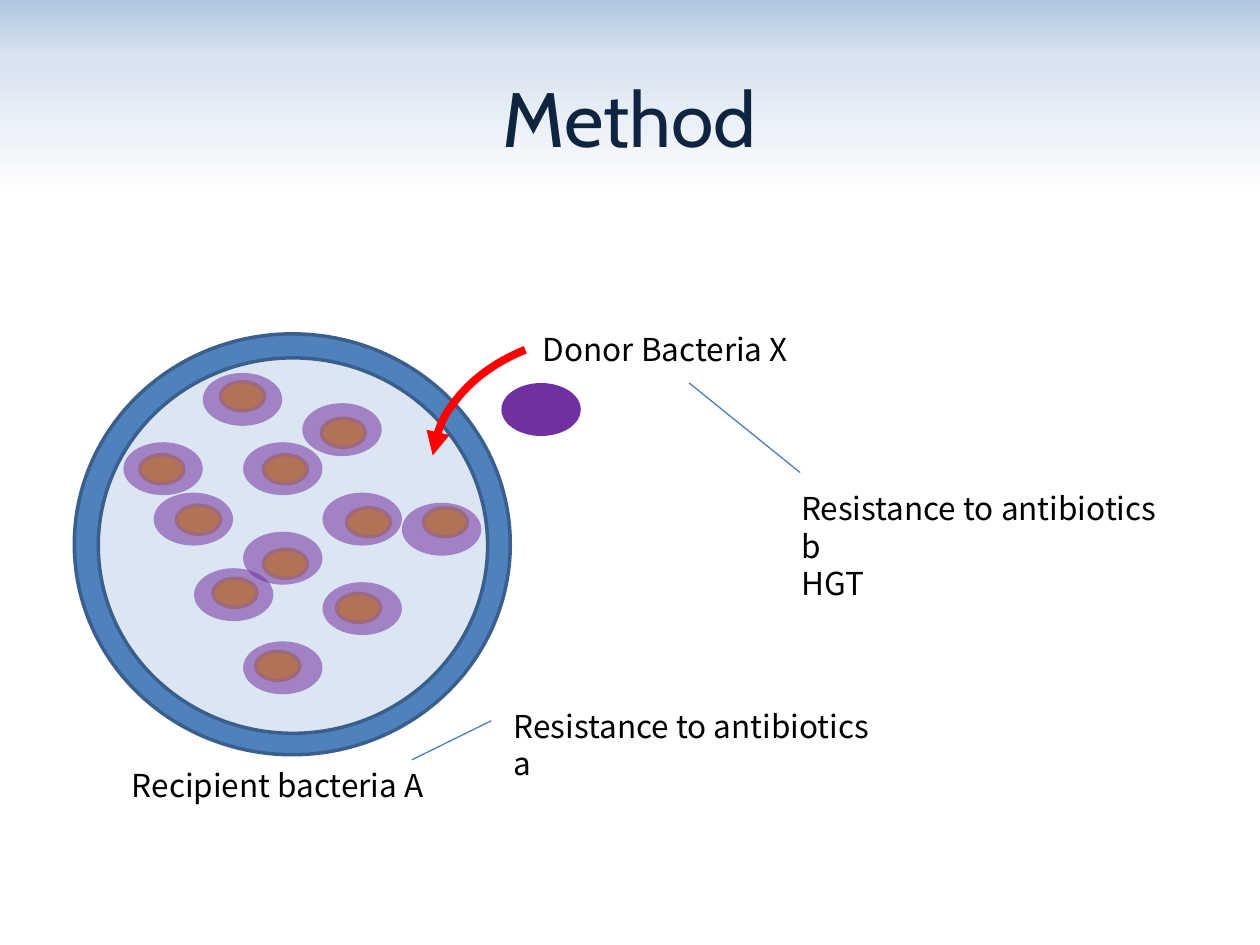
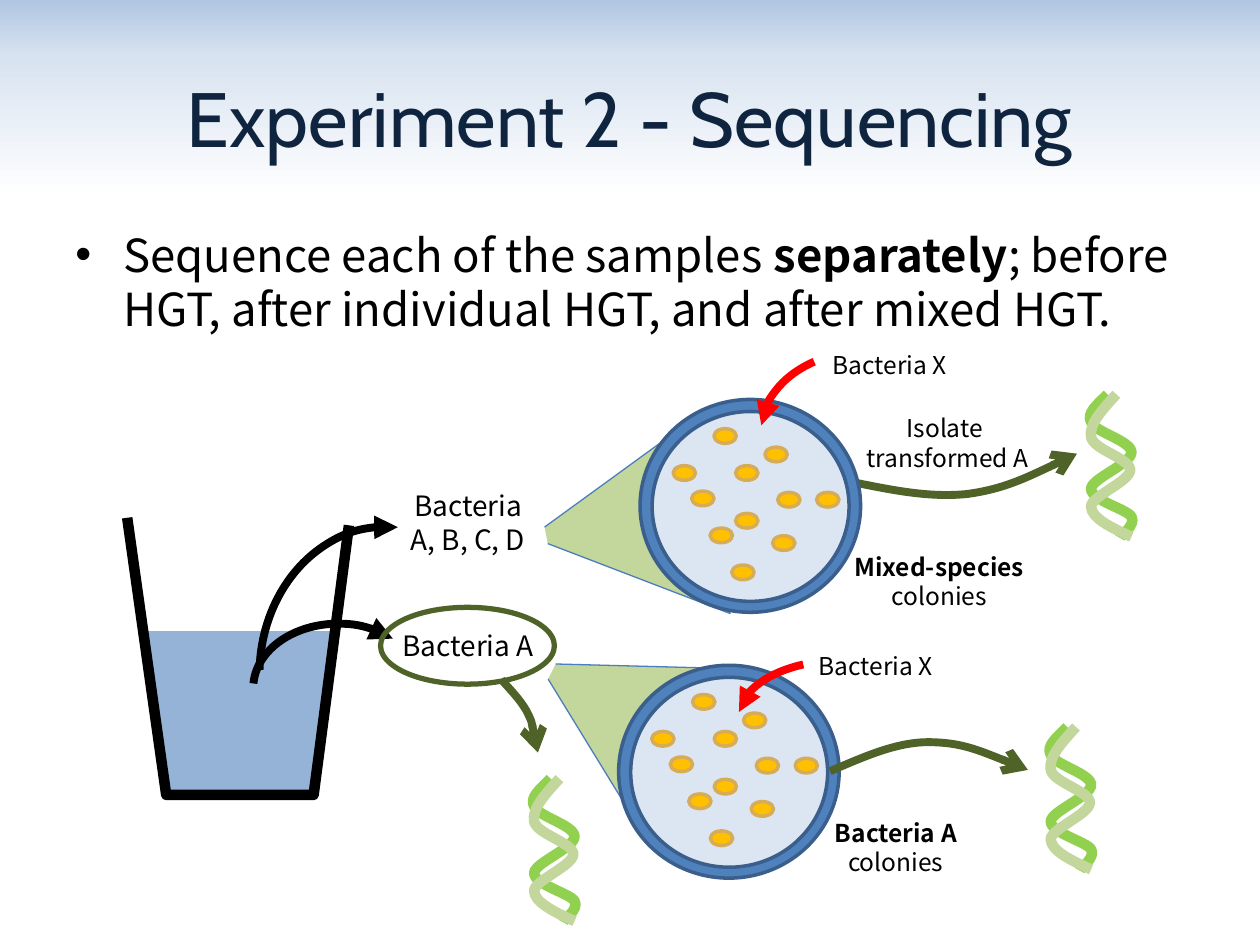
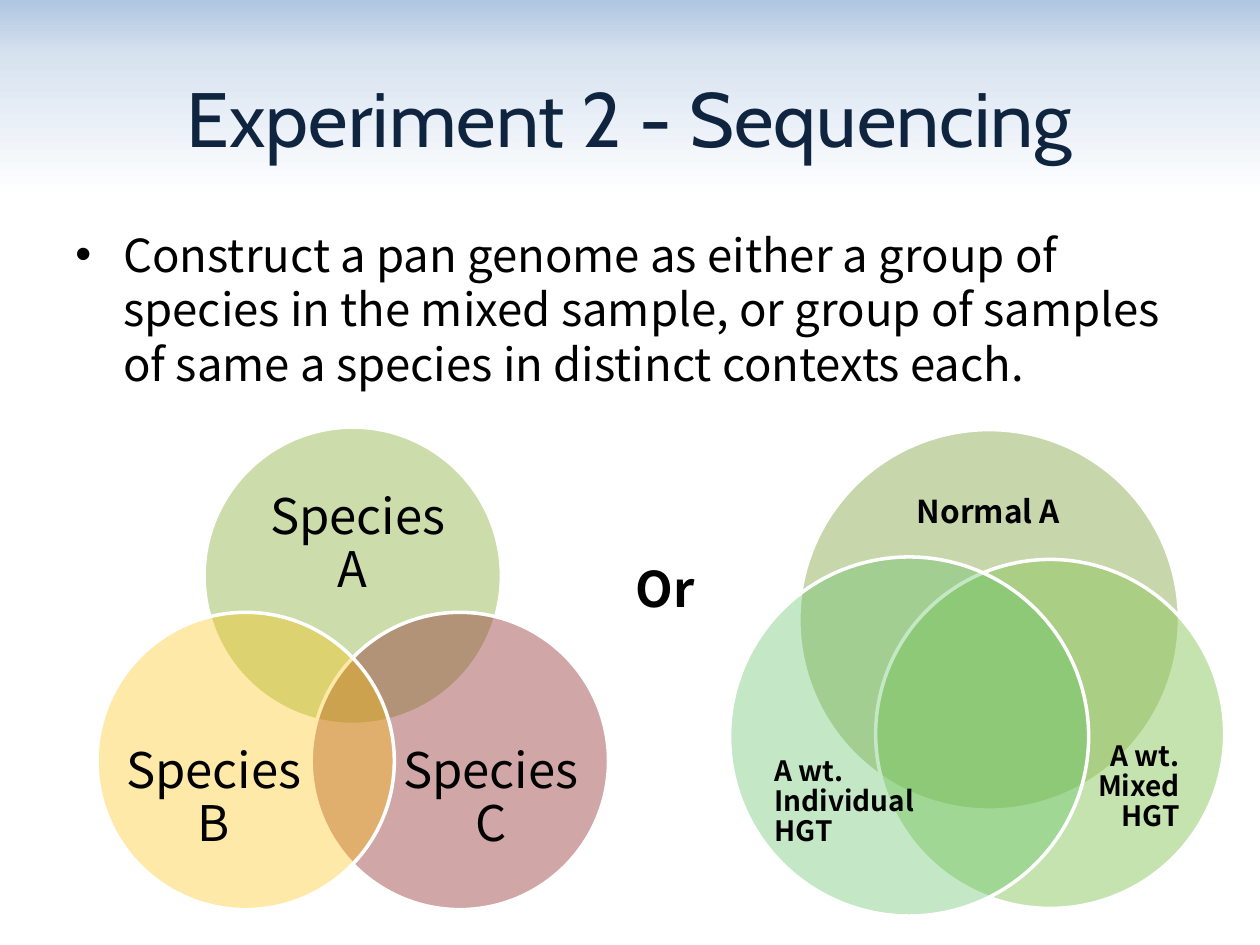
from copy import deepcopy
from dataclasses import dataclass
from math import cos, radians, sin

from lxml.etree import SubElement
from pptx import Presentation
from pptx.dml.color import RGBColor
from pptx.dml.line import LineFormat
from pptx.enum.shapes import MSO_CONNECTOR, MSO_SHAPE
from pptx.enum.text import MSO_ANCHOR, PP_ALIGN
from pptx.oxml.ns import qn
from pptx.presentation import Presentation as Deck
from pptx.shapes.autoshape import Shape
from pptx.slide import Slide
from pptx.util import Inches, Pt

Point = tuple[float, float]

BLACK = RGBColor(0x00, 0x00, 0x00)
WHITE = RGBColor(0xFF, 0xFF, 0xFF)
NAVY = RGBColor(0x0F, 0x24, 0x3E)
DISH_RIM = RGBColor(0x4F, 0x81, 0xBD)
DISH_EDGE = RGBColor(0x3A, 0x5F, 0x8C)
AGAR = RGBColor(0xDC, 0xE6, 0xF2)
CELL_GOLD = RGBColor(0xFF, 0xC0, 0x00)
CELL_EDGE = RGBColor(0xD6, 0xAC, 0x58)
DONOR_PURPLE = RGBColor(0x70, 0x30, 0xA0)
TRANSFER_RED = RGBColor(0xFF, 0x00, 0x00)
THIN_BLUE = RGBColor(0x4B, 0x7E, 0xBC)
WATER = RGBColor(0x95, 0xB3, 0xD7)
STRAND_GREEN = RGBColor(0x92, 0xD0, 0x50)
PALE_GREEN = RGBColor(0xC3, 0xD6, 0x9B)
DARK_GREEN = RGBColor(0x4F, 0x62, 0x28)
SKY_STOPS = (
    (0, RGBColor(0xB0, 0xC6, 0xE1)),
    (0.06, RGBColor(0xD8, 0xE3, 0xF0)),
    (0.21, WHITE),
)

TITLE_FONT = "Cabin"
BODY_FONT = "Noto Sans CJK KR"

DISH_WIDTH = 3.46
SMALL_SCALE = 1.75 / DISH_WIDTH
CELL_SPOTS = (
    (1.16, 0.38), (0.52, 0.96), (1.5, 0.96), (1.44, 2.52), (1.1, 1.94), (2.08, 2.06),
    (0.81, 1.36), (1.5, 1.71), (2.77, 1.38), (2.16, 1.38), (1.96, 0.67),
)
TRANSFORMED_SPOTS = (
    (2.4, 3.2), (3.19, 3.99), (1.61, 2.96), (1.93, 3.51), (2.56, 3.91), (1.93, 4.22),
    (2.56, 4.62), (1.54, 4.51), (1.93, 5.09), (0.98, 3.51), (1.22, 3.91),
)
DONOR_SPOT = (3.98, 3.04)
WEDGE = ((0, 0.12), (0.81, 1.44), (1.58, 0.04), (0.06, 0))
BACK_STRAND = (
    (0.14, 0), (0.06, 0.08), (-0.03, 0.15), (0.01, 0.22), (0.04, 0.3), (0.33, 0.37),
    (0.33, 0.46), (0.33, 0.55), (0.01, 0.67), (0.01, 0.75), (0.01, 0.84), (0.29, 0.91),
    (0.33, 0.97), (0.37, 1.04), (0.24, 1.12), (0.24, 1.14),
)
FRONT_STRAND = (
    (0.21, 0), (0.1, 0.12), (-0.01, 0.24), (0.01, 0.34), (0.03, 0.44), (0.32, 0.51),
    (0.32, 0.6), (0.32, 0.69), (0.01, 0.81), (0.01, 0.89), (0.01, 0.98), (0.17, 1.06),
    (0.33, 1.13),
)
HELIX_SPOTS = ((8.33, 5.77), (8.65, 3.13), (4.23, 6.18))


@dataclass(frozen=True)
class Box:
    left: float
    top: float
    width: float
    height: float

    def lengths(self) -> tuple[Inches, Inches, Inches, Inches]:
        return Inches(self.left), Inches(self.top), Inches(self.width), Inches(self.height)


@dataclass(frozen=True)
class Label:
    box: Box
    text: str
    size: float = 14
    align: PP_ALIGN = PP_ALIGN.CENTER
    anchor: MSO_ANCHOR = MSO_ANCHOR.TOP
    insets: tuple[float, float, float, float] = (0.1, 0.05, 0.1, 0.05)
    line_spacing: float | None = None
    font: str = BODY_FONT
    color: RGBColor = BLACK


@dataclass(frozen=True)
class Dish:
    left: float
    top: float
    scale: float = 1
    cell_drop: float = 0


@dataclass(frozen=True)
class Sweep:
    box: Box
    start: float = 110.07
    end: float = 140.4
    color: RGBColor = TRANSFER_RED
    mirrored: bool = False


@dataclass(frozen=True)
class Route:
    controls: tuple[Point, ...]
    centre: Point
    rotation: float


@dataclass(frozen=True)
class VennSet:
    left: float
    top: float
    diameter: float
    color: RGBColor
    opacity: int
    label: Label


def set_line(line: LineFormat, color: RGBColor, width: float, head: str = "") -> None:
    line.color.rgb = color
    line.width = Pt(width)
    if head:
        SubElement(line._get_or_add_ln(), qn("a:headEnd"), type=head)


def paint(shape: Shape, fill: RGBColor | None, edge: RGBColor | None = None,
          width: float = 2, opacity: int = 100, head: str = "") -> None:
    shape.shadow.inherit = False
    if fill is None:
        shape.fill.background()
    else:
        shape.fill.solid()
        shape.fill.fore_color.rgb = fill
        if opacity < 100:
            color = shape.element.spPr.find(f"{qn('a:solidFill')}/{qn('a:srgbClr')}")
            SubElement(color, qn("a:alpha"), val=str(opacity * 1000))
    if edge is None:
        shape.line.fill.background()
    else:
        set_line(shape.line, edge, width, head)


def add_ellipse(slide: Slide, box: Box, fill: RGBColor | None, edge: RGBColor | None = None,
                width: float = 2, opacity: int = 100) -> None:
    ellipse = slide.shapes.add_shape(MSO_SHAPE.OVAL, *box.lengths())
    paint(ellipse, fill, edge, width, opacity)


def add_label(slide: Slide, label: Label) -> Shape:
    caption = slide.shapes.add_textbox(*label.box.lengths())
    frame = caption.text_frame
    frame.word_wrap = True
    frame.vertical_anchor = label.anchor
    (frame.margin_left, frame.margin_top,
     frame.margin_right, frame.margin_bottom) = map(Inches, label.insets)
    for row, content in enumerate(label.text.split("\n")):
        paragraph = frame.add_paragraph() if row else frame.paragraphs[0]
        paragraph.alignment = label.align
        paragraph.line_spacing = label.line_spacing
        for part, line in enumerate(content.split("\v")):
            if part:
                paragraph.add_line_break()
            for turn, words in enumerate(line.split("**")):
                if words:
                    run = paragraph.add_run()
                    run.text = words
                    run.font.name = label.font
                    run.font.size = Pt(label.size)
                    run.font.color.rgb = label.color
                    run.font.bold = turn % 2 == 1
    return caption


def add_title(slide: Slide, text: str) -> None:
    add_label(slide, Label(Box(0.5, 0.3, 9, 1.25), text, 44, anchor=MSO_ANCHOR.MIDDLE,
                           font=TITLE_FONT, color=NAVY))


def add_bullet(slide: Slide, text: str) -> None:
    body = add_label(slide, Label(Box(0.5, 1.75, 9, 4.95), text, 26, PP_ALIGN.LEFT))
    paragraph = body.text_frame.paragraphs[0]
    paragraph.space_before = Pt(5.2)
    properties = paragraph._p.get_or_add_pPr()
    properties.set("marL", str(Inches(0.38)))
    properties.set("indent", str(Inches(-0.38)))
    SubElement(properties, qn("a:buFont"), typeface="Arial")
    SubElement(properties, qn("a:buChar"), char="•")


def add_outline(slide: Slide, points: list[Point]) -> Shape:
    (start, *rest) = [(Inches(x), Inches(y)) for x, y in points]
    builder = slide.shapes.build_freeform(*start)
    builder.add_line_segments(rest, close=False)
    return builder.convert_to_shape()


def add_curve(slide: Slide, controls: list[Point]) -> Shape:
    curve = add_outline(slide, controls)
    track = curve.element.spPr.find(f".//{qn('a:path')}")
    corners = track.findall(qn("a:lnTo"))
    for first in range(0, len(corners), 3):
        bend = SubElement(track, qn("a:cubicBezTo"))
        for corner in corners[first:first + 3]:
            bend.append(corner[0])
            track.remove(corner)
    return curve


def shifted(points: tuple[Point, ...], left: float, top: float) -> list[Point]:
    return [(left + x, top + y) for x, y in points]


def turned(point: Point, centre: Point, degrees: float) -> Point:
    angle = radians(degrees)
    x, y = point[0] - centre[0], point[1] - centre[1]
    return (centre[0] + x * cos(angle) - y * sin(angle),
            centre[1] + x * sin(angle) + y * cos(angle))


def add_route(slide: Slide, route: Route) -> None:
    controls = [turned(point, route.centre, -route.rotation) for point in route.controls]
    arrow = add_curve(slide, controls)
    arrow.rotation = route.rotation
    paint(arrow, None, DARK_GREEN, 4.5, head="arrow")


def add_sweep(slide: Slide, sweep: Sweep) -> None:
    arc = slide.shapes.add_shape(MSO_SHAPE.ARC, *sweep.box.lengths())
    arc.adjustments[0] = sweep.start
    arc.adjustments[1] = sweep.end
    if sweep.mirrored:
        arc.element.spPr.get_or_add_xfrm().set("flipH", "1")
    paint(arc, None, sweep.color, 4.5, head="triangle")


def add_helix(slide: Slide, left: float, top: float) -> None:
    for strand, color in ((BACK_STRAND, STRAND_GREEN), (FRONT_STRAND, PALE_GREEN)):
        paint(add_curve(slide, shifted(strand, left, top)), None, color, 6)


def add_wedge(slide: Slide, left: float, top: float, rotation: float = 0) -> None:
    wedge = add_outline(slide, shifted(WEDGE, left, top))
    wedge.rotation = rotation
    paint(wedge, PALE_GREEN, THIN_BLUE, 0.75)


def add_dish(slide: Slide, dish: Dish) -> None:
    def scaled(x: float, y: float, width: float, height: float, drop: float = 0) -> Box:
        return Box(dish.left + x * dish.scale, dish.top + y * dish.scale + drop,
                   width * dish.scale, height * dish.scale)

    add_ellipse(slide, scaled(0, 0, DISH_WIDTH, 3.34), DISH_RIM, DISH_EDGE)
    add_ellipse(slide, scaled(0.19, 0.19, 3.09, 2.98), AGAR, DISH_EDGE)
    for x, y in CELL_SPOTS:
        add_ellipse(slide, scaled(x, y, 0.35, 0.23, dish.cell_drop), CELL_GOLD, CELL_EDGE)


def add_venn(slide: Slide, sets: tuple[VennSet, ...]) -> None:
    for group in sets:
        add_ellipse(slide, Box(group.left, group.top, group.diameter, group.diameter),
                    group.color, WHITE, opacity=group.opacity)
        add_label(slide, group.label)


def new_slide(deck: Deck, title: str) -> Slide:
    slide = deck.slides.add_slide(deck.slide_layouts[6])
    add_title(slide, title)
    return slide


def set_sky(deck: Deck) -> None:
    master = deck.slide_master
    sky = master.background.fill
    sky.gradient()
    sky.gradient_angle = 270
    stops = master.element.find(f".//{qn('p:bg')}//{qn('a:gsLst')}")
    stops.append(deepcopy(stops[0]))
    for stop, (position, color) in zip(sky.gradient_stops, SKY_STOPS):
        stop.position = position
        stop.color.rgb = color


def build_method(deck: Deck) -> None:
    slide = new_slide(deck, "Method")
    add_dish(slide, Dish(0.59, 2.65))
    narrow = (0.1, 0.05, 0.2, 0.05)
    for label in (
        Label(Box(4.21, 2.57, 2.6, 0.4), "Donor Bacteria X", 18, PP_ALIGN.LEFT),
        Label(Box(0.75, 6.03, 2.91, 0.4), "Recipient bacteria A", 18),
        Label(Box(3.98, 5.56, 3.18, 0.4), "Resistance to antibiotics a", 18, PP_ALIGN.LEFT,
              insets=narrow),
        Label(Box(6.26, 3.83, 3.2, 0.71), "Resistance to antibiotics b\nHGT", 18,
              PP_ALIGN.LEFT, insets=narrow),
    ):
        add_label(slide, label)
    for start, end in (((3.27, 6.03), (3.9, 5.72)), ((5.47, 3.04), (6.35, 3.75))):
        pointer = slide.shapes.add_connector(MSO_CONNECTOR.STRAIGHT,
                                             *map(Inches, start + end))
        set_line(pointer.line, THIN_BLUE, 0.75)
        SubElement(pointer._element.spPr, qn("a:effectLst"))
    add_sweep(slide, Sweep(Box(3.43, 2.65, 2.82, 2.1)))
    add_ellipse(slide, Box(*DONOR_SPOT, 0.63, 0.42), DONOR_PURPLE)
    for spot in TRANSFORMED_SPOTS:
        add_ellipse(slide, Box(*spot, 0.63, 0.42), DONOR_PURPLE, opacity=54)


def build_sampling(deck: Deck) -> None:
    slide = new_slide(deck, "Experiment 2 - Sequencing")
    add_bullet(slide, "Sequence each of the samples **separately**; before HGT, "
                      "after individual HGT, and after mixed HGT.")
    water = add_outline(slide, [(1.17, 5.01), (1.33, 6.31), (2.45, 6.31),
                                (2.65, 5.06), (2.65, 5.01)])
    paint(water, WATER, THIN_BLUE, 0.75)
    beaker = add_outline(slide, [(1.01, 4.11), (1.32, 6.31), (2.49, 6.31), (2.77, 4.17)])
    paint(beaker, None, BLACK, 6)
    add_sweep(slide, Sweep(Box(2.06, 4.18, 2.02, 2.34), 159.41, 214.86, BLACK, True))
    add_sweep(slide, Sweep(Box(2.01, 4.95, 1.35, 1.02), 133.26, 214.19, BLACK, True))

    add_wedge(slide, 4.35, 5.27)
    add_dish(slide, Dish(4.91, 5.28, SMALL_SCALE, 0.04))
    add_sweep(slide, Sweep(Box(5.86, 5.24, 1.65, 0.92)))
    for route in (
        Route(((8.16, 6.11), (7.89, 6), (7.63, 5.89), (7.37, 5.89),
               (7.11, 5.89), (6.85, 6.01), (6.59, 6.12)), (7.39, 6.06), 8),
        Route(((8.55, 3.6), (8.26, 3.74), (7.97, 3.88), (7.68, 3.92),
               (7.38, 3.95), (7.09, 3.89), (6.79, 3.83)), (7.68, 3.77), 346.2),
        Route(((4.27, 5.98), (4.25, 5.86), (4.23, 5.75), (4.18, 5.65),
               (4.13, 5.56), (4.05, 5.48), (3.98, 5.4)), (4.14, 5.68), 69.4),
    ):
        add_route(slide, route)
    for spot in HELIX_SPOTS:
        add_helix(slide, *spot)
    add_ellipse(slide, Box(3.02, 4.82, 1.38, 0.61), None, DARK_GREEN, 3)

    add_wedge(slide, 4.55, 3.59, 322.5)
    add_dish(slide, Dish(5.08, 3.17, SMALL_SCALE, 0.04))
    add_sweep(slide, Sweep(Box(6.04, 2.79, 1.65, 1.27)))
    for label in (
        Label(Box(2.79, 3.83, 1.85, 0.64), "Bacteria\vA, B, C, D", 16),
        Label(Box(3.07, 4.94, 1.29, 0.37), "Bacteria A", 16),
        Label(Box(6.49, 6.44, 1.24, 0.57), "**Bacteria A **colonies"),
        Label(Box(6.4, 5.12, 1.57, 0.34), "Bacteria X", align=PP_ALIGN.LEFT),
        Label(Box(6.66, 4.33, 1.59, 0.57), "**Mixed-species **colonies"),
        Label(Box(6.51, 2.73, 1.57, 0.34), "Bacteria X", align=PP_ALIGN.LEFT),
        Label(Box(6.67, 3.23, 1.7, 0.57), "Isolate \vtransformed A"),
    ):
        add_label(slide, label)


def build_pan_genome(deck: Deck) -> None:
    slide = new_slide(deck, "Experiment 2 - Sequencing")
    add_bullet(slide, "Construct a pan genome as either a group of species in the mixed "
                      "sample, or group of samples of same a species in distinct contexts each.")
    low = (0, 0, 0, 0.01)
    side = (0.1, 0, 0.1, 0)
    add_venn(slide, (
        VennSet(1.62, 3.39, 2.36, RGBColor(0x9B, 0xBB, 0x59), 50,
                Label(Box(1.93, 3.8, 1.73, 1.06), " Species A", 28,
                      anchor=MSO_ANCHOR.MIDDLE, insets=(0, 0, 0, 0), line_spacing=0.9)),
        VennSet(2.47, 4.86, 2.36, RGBColor(0x95, 0x37, 0x35), 44,
                Label(Box(3.19, 5.47, 1.41, 1.3), "Species\vC", 28,
                      anchor=MSO_ANCHOR.BOTTOM, insets=low, line_spacing=0.9)),
        VennSet(0.77, 4.86, 2.36, CELL_GOLD, 34,
                Label(Box(0.99, 5.47, 1.41, 1.3), "Species\vB", 28,
                      anchor=MSO_ANCHOR.BOTTOM, insets=low, line_spacing=0.9)),
    ))
    add_venn(slide, (
        VennSet(6.34, 3.41, 3.02, RGBColor(0x8D, 0xAA, 0x51), 48,
                Label(Box(6.74, 3.94, 2.21, 1.36), "**Normal A**", 18,
                      insets=side, line_spacing=0.9)),
        VennSet(6.95, 4.44, 2.77, RGBColor(0x8A, 0xC7, 0x5D), 49,
                Label(Box(7.8, 5.16, 1.66, 1.52), "**A wt.**\v**Mixed**\v**HGT**", 16,
                      PP_ALIGN.RIGHT, MSO_ANCHOR.BOTTOM, (0.1, 0, 0.1, 0.07), 0.9)),
        VennSet(5.79, 4.42, 2.85, RGBColor(0x61, 0xC3, 0x66), 37,
                Label(Box(6.05, 5.16, 1.71, 1.57), "**A wt. **\v**Individual HGT**", 16,
                      PP_ALIGN.LEFT, MSO_ANCHOR.BOTTOM, side, 0.9)),
    ))
    add_label(slide, Label(Box(4.69, 4.38, 1.18, 0.57), "**Or**", 28))


def main() -> None:
    deck = Presentation()
    deck.slide_width = Inches(10)
    deck.slide_height = Inches(7.5)
    set_sky(deck)
    build_method(deck)
    build_sampling(deck)
    build_pan_genome(deck)
    deck.save("out.pptx")


if __name__ == "__main__":
    main()
